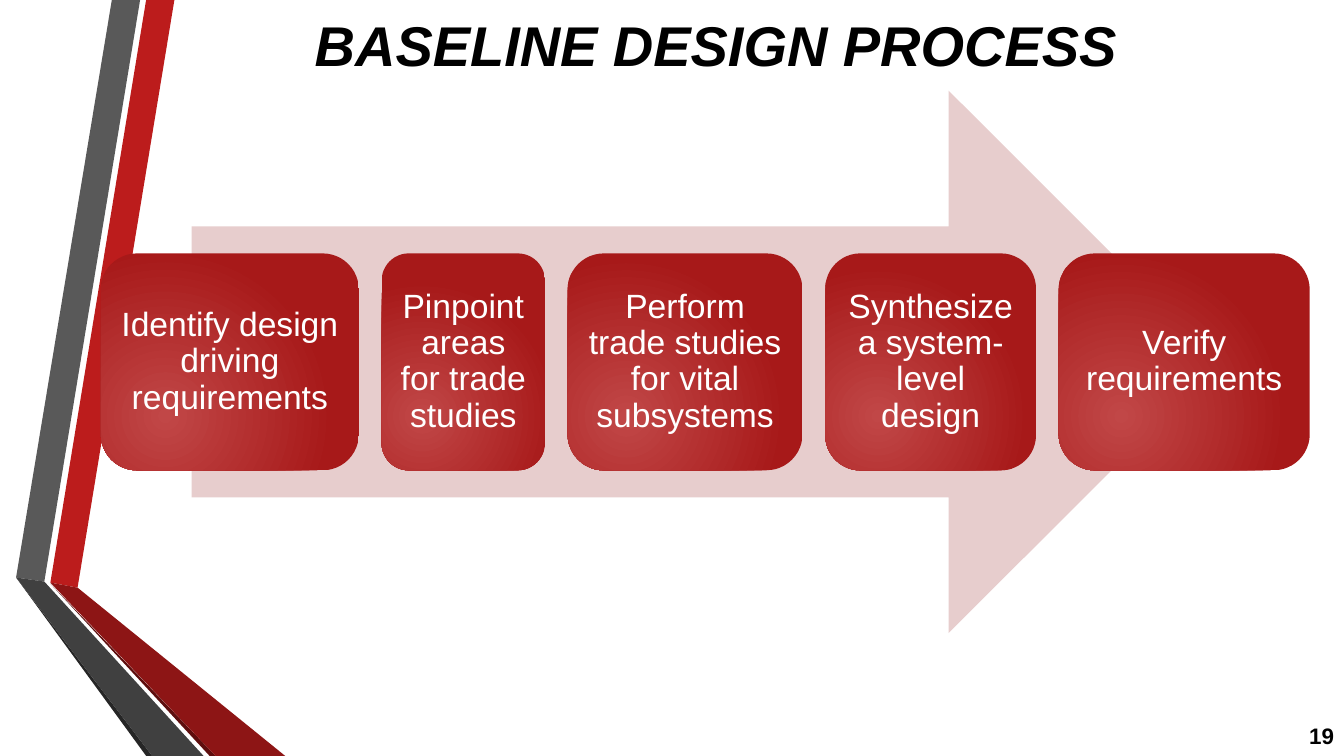
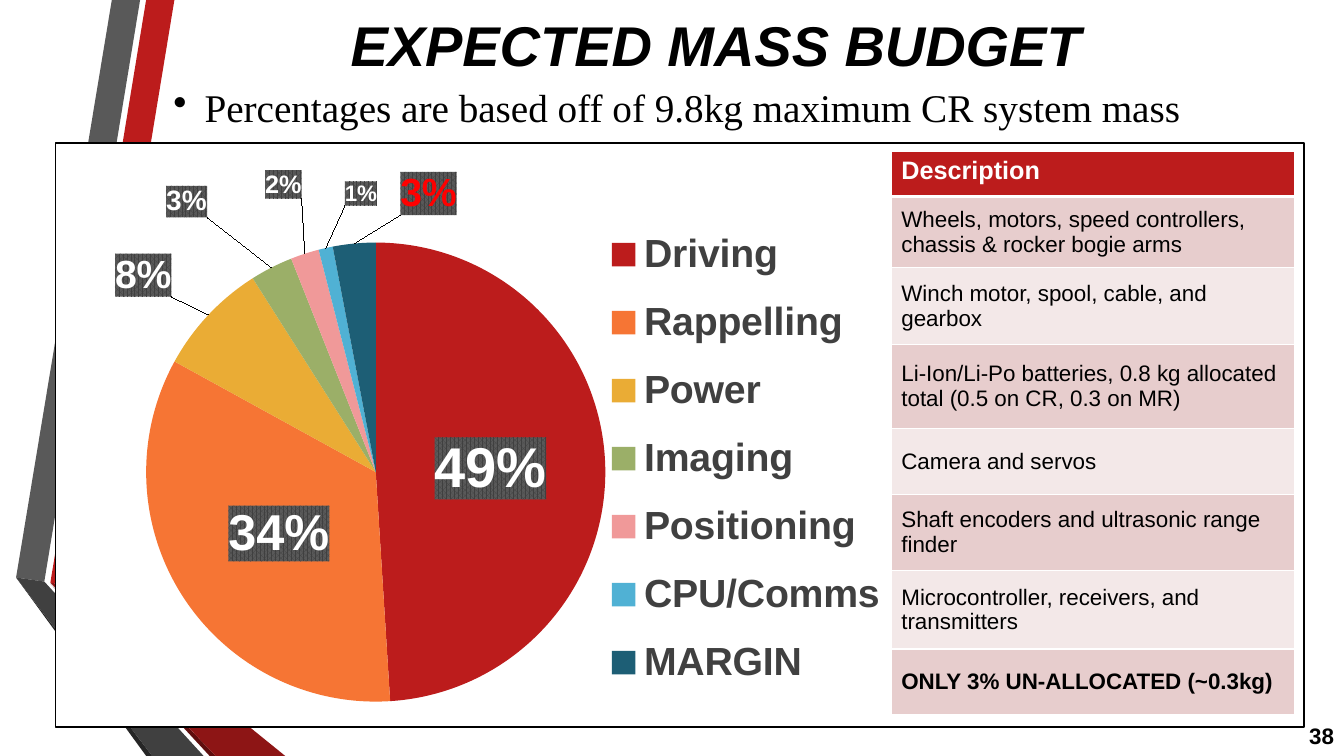
"""Build two slides: the baseline design process and the expected mass budget."""
from math import cos, pi, sin

from lxml import etree
from pptx import Presentation
from pptx import util as u
from pptx.chart.data import CategoryChartData
from pptx.dml.color import RGBColor
from pptx.enum import chart as charts, shapes, text
from pptx.oxml import parse_xml
from pptx.oxml.ns import nsdecls, qn

COLORS = {
    "red": "BC1C1C", "dark_red": "8D1515", "deep_red": "5E0E0E",
    "gray": "595959", "dark_gray": "404040", "deep_gray": "262626",
    "white": "FFFFFF", "black": "000000", "alert": "FF0000",
    "rose": "E7CDCD", "pale_rose": "F3E8E8",
    "step_light": "C14747", "step_dark": "A71919",
    "orange": "F67534", "gold": "EAAC35", "green": "9BAF68",
    "pink": "F09999", "sky": "50B1D4", "teal": "1D5E75",
}
WIDTH, HEIGHT = 13.33, 7.5
TITLE_BOX = (1.62, 0, 10.96, 0.88)
NUMBER_BOX = (12.73, 7.1, 0.6, 0.4)

BANDS = [
    ("red", [(0.5, 5.78), (0.77, 5.83), (1.73, 0), (1.45, 0)]),
    ("gray", [(1.39, 0), (1.11, 0), (0.16, 5.73), (0.44, 5.77)]),
    ("deep_gray", [(0.16, 5.73), (1.45, HEIGHT), (1.51, HEIGHT)]),
    ("deep_red", [(0.5, 5.79), (2.08, HEIGHT), (2.14, HEIGHT)]),
    ("dark_red", [(0.5, 5.78), (2.14, HEIGHT), (2.83, HEIGHT), (0.77, 5.83)]),
    ("dark_gray", [(2.02, HEIGHT), (0.44, 5.77), (0.16, 5.73), (1.51, HEIGHT)]),
]
STEPS = [
    ("Identify design driving requirements", 2.56),
    ("Pinpoint areas for trade studies", 1.62),
    ("Perform trade studies for vital subsystems", 2.33),
    ("Synthesize a system-level design", 2.09),
    ("Verify requirements", 2.49),
]
# Label centres are inches from the chart corner; None keeps the slice centre.
SLICES = [
    ("Driving", 49, "red", 40, "white", None),
    ("Rappelling", 34, "orange", 36, "white", None),
    ("Power", 8, "gold", 28, "white", (0.87, 1.3)),
    ("Imaging", 3, "green", 20, "white", (1.3, 0.57)),
    ("Positioning", 2, "pink", 18, "white", (2.26, 0.4)),
    ("CPU/Comms", 1, "sky", 16, "white", (3.03, 0.49)),
    ("MARGIN", 3, "teal", 28, "alert", (3.7, 0.49)),
]
DESCRIPTIONS = [
    ("Description", 0.45),
    ("Wheels, motors, speed controllers, chassis & rocker bogie arms", 0.7),
    ("Winch motor, spool, cable, and gearbox", 0.77),
    ("Li-Ion/Li-Po batteries, 0.8 kg allocated total (0.5 on CR, 0.3 on MR)", 0.83),
    ("Camera and servos", 0.66),
    ("Shaft encoders and ultrasonic range finder", 0.75),
    ("Microcontroller, receivers, and transmitters", 0.78),
    ("ONLY 3% UN-ALLOCATED (~0.3kg)", 0.65),
]


def rgb(name):
    """Return the named colour."""
    return RGBColor.from_string(COLORS[name])


def inches(box):
    """Convert a box in inches to lengths."""
    return [u.Inches(value) for value in box]


def paint(shape, fill, line=None):
    """Give a shape a flat fill, an optional outline and no shadow."""
    shape.shadow.inherit = False
    shape.fill.solid()
    shape.fill.fore_color.rgb = rgb(fill)
    if line:
        shape.line.color.rgb = rgb(line)
        shape.line.width = u.Pt(1.25)
    else:
        shape.line.fill.background()


def style_font(font, size, color="black", bold=False, italic=False, name="Arial"):
    """Set the look of a font."""
    font.name, font.size = name, u.Pt(size)
    font.bold, font.italic = bold, italic
    font.color.rgb = rgb(color)


def write(frame, words, align="LEFT", anchor="MIDDLE", **font):
    """Write one paragraph into a text frame and return it."""
    frame.word_wrap = True
    frame.vertical_anchor = getattr(text.MSO_ANCHOR, anchor)
    para = frame.paragraphs[0]
    para.alignment = getattr(text.PP_ALIGN, align)
    span = para.add_run()
    span.text = words
    style_font(span.font, **font)
    return para


def add_text(page, box, words, **style):
    """Add a text box holding one paragraph."""
    return write(page.shapes.add_textbox(*inches(box)).text_frame, words, **style)


def add_page(deck):
    """Add a blank slide with the folded side bands."""
    page = deck.slides.add_slide(deck.slide_layouts[6])
    for color, corners in BANDS:
        points = [inches(corner) for corner in corners]
        builder = page.shapes.build_freeform(*points[0], scale=1.0)
        builder.add_line_segments(points[1:], close=True)
        paint(builder.convert_to_shape(), color)
    return page


def add_heading(page, title, number):
    """Add the title and the slide number."""
    add_text(page, TITLE_BOX, title, align="CENTER", size=40, bold=True, italic=True)
    add_text(page, NUMBER_BOX, number, align="RIGHT", size=16, bold=True)


def add_glow(shape):
    """Fill a shape with a round gradient lit from the lower left."""
    paint(shape, "step_dark")
    stops = "".join(
        f'<a:gs pos="{place}"><a:srgbClr val="{COLORS[name]}"/></a:gs>'
        for place, name in ((0, "step_light"), (100000, "step_dark")))
    glow = parse_xml(
        f'<a:gradFill {nsdecls("a")} rotWithShape="1"><a:gsLst>{stops}</a:gsLst>'
        '<a:path path="circle"><a:fillToRect l="50000" t="100000" r="100000" b="50000"/>'
        '</a:path></a:gradFill>')
    flat = shape.element.spPr.find(qn("a:solidFill"))
    flat.getparent().replace(flat, glow)


def add_process(page, box):
    """Add a wide arrow with a row of evenly spaced steps over it."""
    left, top, width, height = box
    margin = 0.9
    arrow = page.shapes.add_shape(
        shapes.MSO_SHAPE.RIGHT_ARROW,
        *inches((left + margin, top, width - 2 * margin + 0.01, height)))
    paint(arrow, "rose")
    gap = (width - sum(size for _, size in STEPS)) / (len(STEPS) - 1)
    step_height = height * 0.4
    for words, step_width in STEPS:
        step = page.shapes.add_shape(
            shapes.MSO_SHAPE.ROUNDED_RECTANGLE,
            *inches((left, top + height * 0.3, step_width, step_height)))
        add_glow(step)
        frame = step.text_frame
        frame.margin_left = frame.margin_right = u.Inches(0.1)
        frame.margin_top = frame.margin_bottom = u.Inches(0.1)
        para = write(frame, words, align="CENTER", size=24, color="white")
        para.line_spacing = 0.9
        left += step_width + gap


def add_bullet(page, box, words):
    """Add a bulleted line with a hanging indent."""
    para = add_text(page, box, words, anchor="TOP", size=28, name="Times New Roman")
    props = para._p.get_or_add_pPr()
    indent = u.Inches(0.31)
    props.set("marL", str(indent))
    props.set("indent", str(-indent))
    etree.SubElement(props, qn("a:buChar")).set("char", "•")


def set_layout(parent, place, x, y, width=None, height=None, inner=False):
    """Place a chart part by hand, in fractions of the chart."""
    parts = [("layoutTarget", "inner")] if inner else []
    if width:
        parts += [("xMode", "edge"), ("yMode", "edge")]
    parts += [("x", round(x, 4)), ("y", round(y, 4))]
    if width:
        parts += [("w", width), ("h", height)]
    body = "".join(f'<c:{tag} val="{value}"/>' for tag, value in parts)
    for old in parent.findall(qn("c:layout")):
        parent.remove(old)
    parent.insert(place, parse_xml(
        f'<c:layout {nsdecls("c")}><c:manualLayout>{body}</c:manualLayout></c:layout>'))


def add_label(point, size, color, offset):
    """Give a slice its percentage on a dark patterned plate."""
    style_font(point.data_label.font, size, color, bold=True)
    label = point.data_label._dLbl
    for tag in ("showLegendKey", "showVal", "showCatName", "showSerName", "showPercent"):
        label.find(qn(f"c:{tag}")).set("val", str(int(tag == "showPercent")))
    plate = parse_xml(
        f'<c:spPr {nsdecls("c", "a")}><a:pattFill prst="pct75">'
        f'<a:fgClr><a:srgbClr val="{COLORS["dark_gray"]}"/></a:fgClr>'
        f'<a:bgClr><a:srgbClr val="{COLORS["gray"]}"/></a:bgClr></a:pattFill></c:spPr>')
    label.find(qn("c:txPr")).addprevious(plate)
    point.data_label.position = charts.XL_LABEL_POSITION.CENTER
    if offset:
        set_layout(label, 1, *offset)


def add_pie(page, box):
    """Add the mass pie chart with its legend and labels."""
    width, height = box[2:]
    data = CategoryChartData()
    data.categories = [entry[0] for entry in SLICES]
    data.add_series("Series 1", [entry[1] for entry in SLICES])
    chart = page.shapes.add_chart(charts.XL_CHART_TYPE.PIE, *inches(box), data).chart
    chart.has_title = False
    chart.has_legend = True
    chart.legend.position = charts.XL_LEGEND_POSITION.RIGHT
    chart.legend.include_in_layout = False
    style_font(chart.legend.font, 28, "dark_gray", bold=True)
    set_layout(chart.legend._element, 1, 0.65, 0.11, 0.34, 0.86)
    plot = chart.plots[0]
    plot.vary_by_categories = True
    x, y, w, h = 0.087, 0.169, 0.587, 0.788
    set_layout(chart._chartSpace.chart.plotArea, 0, x, y, w, h, inner=True)
    center = ((x + w / 2) * width, (y + h / 2) * height)
    reach = min(w * width, h * height) / 4
    series = plot.series[0]
    total, passed = sum(entry[1] for entry in SLICES), 0
    for index, (_, value, fill, size, color, target) in enumerate(SLICES):
        point = series.points[index]
        point.format.fill.solid()
        point.format.fill.fore_color.rgb = rgb(fill)
        angle = 2 * pi * (passed + value / 2) / total
        passed += value
        offset = target and (
            (target[0] - center[0] - reach * sin(angle)) / width,
            (target[1] - center[1] + reach * cos(angle)) / height)
        add_label(point, size, color, offset)
    labels = series.data_labels
    labels.show_percentage, labels.show_value = True, False
    labels._element.find(qn("c:showLeaderLines")).set("val", "1")


def add_border(cell, side, points):
    """Draw one white cell border."""
    props = cell._tc.get_or_add_tcPr()
    line = parse_xml(
        f'<a:{side} {nsdecls("a")} w="{u.Pt(points)}"><a:solidFill>'
        f'<a:srgbClr val="{COLORS["white"]}"/></a:solidFill></a:{side}>')
    props.insert(("lnL", "lnR", "lnT", "lnB").index(side), line)


def add_descriptions(page, box):
    """Add the one-column table of subsystem descriptions."""
    table = page.shapes.add_table(len(DESCRIPTIONS), 1, *inches(box)).table
    last = len(DESCRIPTIONS) - 1
    for index, (words, height) in enumerate(DESCRIPTIONS):
        table.rows[index].height = u.Inches(height)
        cell = table.cell(index, 0)
        header = index == 0
        fill = "red" if header else "rose" if index % 2 else "pale_rose"
        cell.fill.solid()
        cell.fill.fore_color.rgb = rgb(fill)
        write(cell.text_frame, words, size=18 if header else 16,
              color="white" if header else "black", bold=index in (0, last))
        cell.vertical_anchor = text.MSO_ANCHOR.TOP if header else text.MSO_ANCHOR.MIDDLE
        for side in ("lnL", "lnR", "lnT", "lnB"):
            thick = (header and side == "lnB") or (index == 1 and side == "lnT")
            add_border(cell, side, 3 if thick else 1)


def build_process(deck):
    """Build the design process slide."""
    page = add_page(deck)
    add_heading(page, "BASELINE DESIGN PROCESS", "19")
    add_process(page, (1, 0.9, 11.99, 5.38))


def build_budget(deck):
    """Build the mass budget slide."""
    page = add_page(deck)
    panel = page.shapes.add_shape(
        shapes.MSO_SHAPE.RECTANGLE, *inches((0.55, 1.42, 12.38, 5.79)))
    paint(panel, "white", line="black")
    add_heading(page, "EXPECTED MASS BUDGET", "38")
    add_bullet(page, (1.62, 0.78, 10.29, 0.57),
               "Percentages are based off of 9.8kg maximum CR system mass")
    add_descriptions(page, (8.84, 1.5, 4, 5.59))
    add_pie(page, (0.55, 1.43, 8.35, 5.78))


def main():
    """Build and save the deck."""
    deck = Presentation()
    deck.slide_width, deck.slide_height = inches((WIDTH, HEIGHT))
    build_process(deck)
    build_budget(deck)
    deck.save("out.pptx")


if __name__ == "__main__":
    main()
